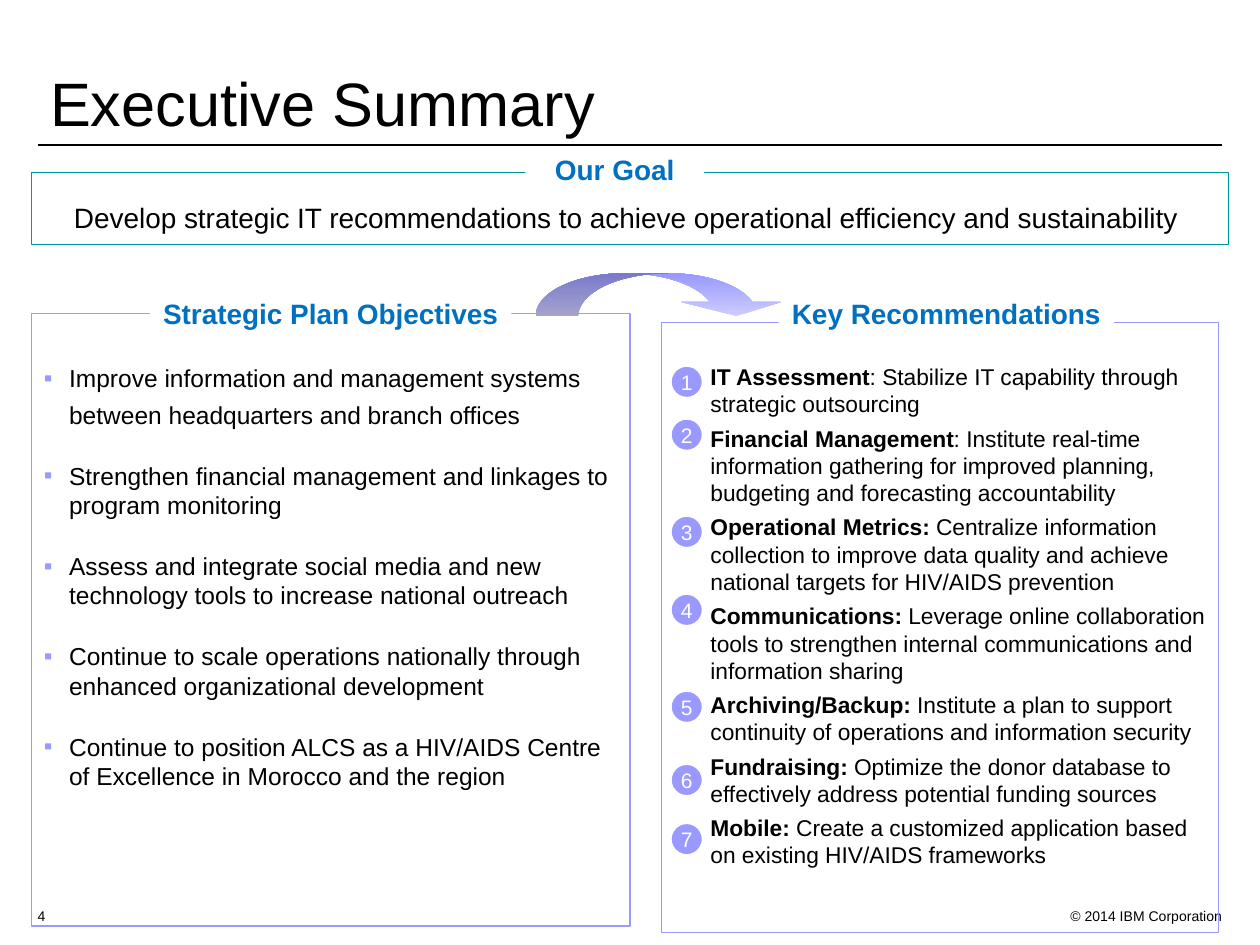
"""Build the executive summary slide with goal, objectives and recommendations."""
import pptx
import pptx.dml.color
import pptx.enum.shapes
import pptx.enum.text
import pptx.oxml
import pptx.oxml.ns
import pptx.util
from lxml import etree

Pt = pptx.util.Pt
SHAPE = pptx.enum.shapes.MSO_SHAPE
ALIGN = pptx.enum.text.PP_ALIGN
ANCHOR = pptx.enum.text.MSO_ANCHOR
qn = pptx.oxml.ns.qn


def rgb(value):
    return pptx.dml.color.RGBColor.from_string(value)


def add_box(kind, bounds, paras=(), size=14, color="000000", bold=False, fill=None,
            line=None, weight=0.75, frame=None, para=None, bullet=None, hang=0, left=0):
    sp = s.shapes.add_shape(kind, *[Pt(v) for v in bounds])
    sp.shadow.inherit = False
    if fill:
        sp.fill.solid()
        sp.fill.fore_color.rgb = rgb(fill)
    else:
        sp.fill.background()
    if line:
        sp.line.color.rgb = rgb(line)
        sp.line.width = Pt(weight)
    else:
        sp.line.fill.background()
    tf = sp.text_frame
    settings = {"word_wrap": True, "vertical_anchor": ANCHOR.TOP, **(frame or {})}
    for name, value in settings.items():
        setattr(tf, name, value)
    for i, runs in enumerate(paras):
        p = tf.paragraphs[0] if i == 0 else tf.add_paragraph()
        pPr = p._p.get_or_add_pPr()
        pPr.set("marL", str(Pt(left)))
        pPr.set("indent", str(Pt(-hang)))
        if bullet:
            clr = etree.SubElement(pPr, qn("a:buClr"))
            etree.SubElement(clr, qn("a:srgbClr")).set("val", bullet)
            etree.SubElement(pPr, qn("a:buFont")).set("typeface", "Arial")
            etree.SubElement(pPr, qn("a:buChar")).set("char", "▪")
        for name, value in {"alignment": ALIGN.LEFT, **(para or {})}.items():
            if name != "space_before" or i > 0:
                setattr(p, name, value)
        for text, strong in runs:
            r = p.add_run()
            r.text = text
            r.font.color.rgb = rgb(color)
            for name, value in {"name": "Arial", "size": Pt(size), "bold": bold or strong}.items():
                setattr(r.font, name, value)
    return sp


prs = pptx.Presentation()
prs.slide_width, prs.slide_height = Pt(720), Pt(540)
s = prs.slides.add_slide(prs.slide_layouts[6])

rule = s.shapes.add_connector(pptx.enum.shapes.MSO_CONNECTOR.STRAIGHT,
                              Pt(21.6), Pt(82.8), Pt(698.4), Pt(82.8))
rule.line.color.rgb = rgb("000000")
rule.line.width = Pt(0.75)
etree.SubElement(rule._element.spPr, qn("a:effectLst"))

add_box(SHAPE.RECTANGLE, (597.6, 514.8, 108, 14.4), [[("© 2014 IBM Corporation", False)]],
        size=8, para={"alignment": ALIGN.RIGHT})
add_box(SHAPE.RECTANGLE, (21.6, 38.2, 684, 55.4), [[("Executive Summary", False)]], size=35,
        frame={"vertical_anchor": ANCHOR.BOTTOM, "margin_top": 0, "margin_bottom": Pt(14)},
        para={"line_spacing": 0.9})
add_box(SHAPE.RECTANGLE, (21.6 - 7.2, 514.8, 28.8, 14.4), [[("4", False)]], size=8)

goal = "Develop strategic IT recommendations to achieve operational efficiency and sustainability "
add_box(SHAPE.RECTANGLE, (18, 98.6, 684, 41), [[(goal, False)]], size=16, line="009999",
        frame={"margin_top": Pt(16)}, para={"alignment": ALIGN.CENTER})

objectives = [
    "Improve information and management systems between headquarters and branch offices",
    "Strengthen financial management and linkages to program monitoring",
    "Assess and integrate social media and new technology tools to increase national outreach",
    "Continue to scale operations nationally through enhanced organizational development",
    "Continue to position ALCS as a HIV/AIDS Centre of Excellence in Morocco and the region",
]
panel = add_box(SHAPE.RECTANGLE, (18, 179.3, 342, 349.9), [[(text, False)] for text in objectives],
                line="9999FF", frame={"margin_top": Pt(24)}, para={"space_before": Pt(18)},
                bullet="9999FF", hang=14.4, left=14.4)
panel.text_frame.paragraphs[0].line_spacing = 1.25

recommendations = [
    ("IT Assessment", ": Stabilize IT capability through strategic outsourcing"),
    ("Financial Management", ": Institute real-time information gathering for improved planning, "
     "budgeting and forecasting accountability"),
    ("Operational Metrics: ", "Centralize information collection to improve data quality and "
     "achieve national targets for HIV/AIDS prevention"),
    ("Communications: ", "Leverage online collaboration tools to strengthen internal "
     "communications and information sharing"),
    ("Archiving/Backup: ", "Institute a plan to support continuity of operations and "
     "information security"),
    ("Fundraising:", " Optimize the donor database to effectively address potential "
     "funding sources"),
    ("Mobile: ", "Create a customized application based on existing HIV/AIDS frameworks"),
]
add_box(SHAPE.RECTANGLE, (378, 184.3, 318.2, 348.5),
        [[(topic, True), (detail, False)] for topic, detail in recommendations],
        size=13, line="9999FF", frame={"margin_top": Pt(23)},
        para={"space_before": Pt(3.9)}, left=20.9)

headings = [
    ("Our Goal", (300.2, 83.5, 102.2, 26.6)),
    ("Strategic Plan Objectives", (85.7, 165.6, 206.6, 26.6)),
    ("Key Recommendations", (445, 165.6, 191.5, 26.6)),
]
for heading, bounds in headings:
    add_box(SHAPE.RECTANGLE, bounds, [[(heading, False)]], size=16, color="0070C0", bold=True,
            fill="FFFFFF", para={"alignment": ALIGN.CENTER},
            frame={"vertical_anchor": ANCHOR.MIDDLE, "word_wrap": False})

arrow = add_box(SHAPE.CURVED_UP_ARROW, (306, 156.2, 143.3, 24.5))
arrow._element.spPr.get_or_add_xfrm().set("flipV", "1")
for i, value in enumerate((1.16, 2.33, 0.33)):
    arrow.adjustments[i] = value
arrow.fill.gradient()
arrow.fill.gradient_angle = 270
for stop, color in zip(arrow.fill.gradient_stops, ("CCCCFF", "9999FF")):
    stop.color.rgb = rgb(color)

for number, top in enumerate((208.1, 238.3, 293.8, 338.4, 393.8, 435.6, 469.4), 1):
    add_box(SHAPE.OVAL, (382.3, top, 20.2, 20.2), [[(str(number), False)]], size=12,
            color="FFFFFF", fill="9999FF", line="FFFFFF", weight=3,
            para={"alignment": ALIGN.CENTER},
            frame={"vertical_anchor": ANCHOR.MIDDLE, "word_wrap": False})

prs.save("out.pptx")
